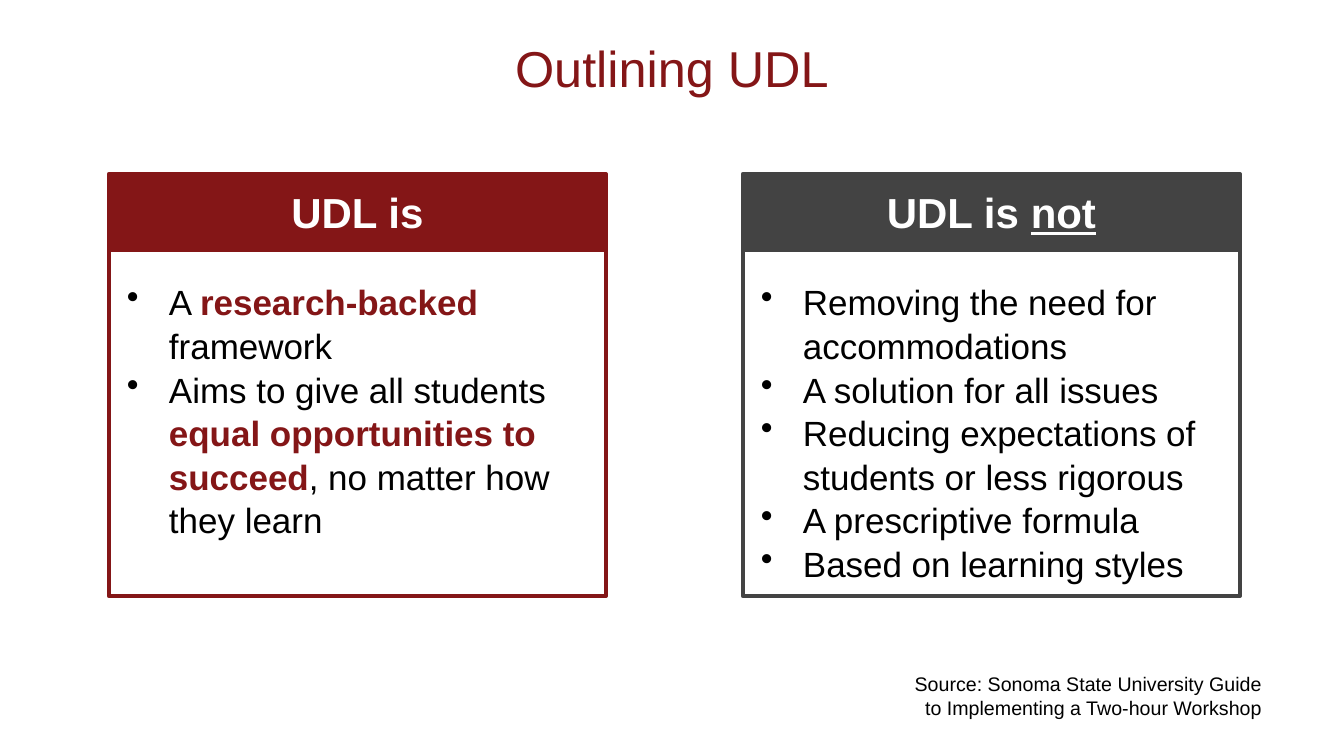
import pptx
import pptx.util
import pptx.dml.color
import pptx.enum.shapes
import pptx.enum.text
import pptx.oxml.ns
from lxml import etree

# Content: each paragraph is a list of (text, style) runs
TITLE = [[("Outlining UDL", "title")]]
PANELS = [
    {"color": "crimson",
     "head": [[("UDL is", "head")]],
     "points": [
         [("A ", "body"), ("research-backed", "strong"), (" framework", "body")],
         [("Aims to give all students ", "body"),
          ("equal opportunities to succeed", "strong"),
          (", no matter how they learn", "body")]]},
    {"color": "gray",
     "head": [[("UDL is ", "head"), ("not", "head_underlined")]],
     "points": [
         [("Removing the need for accommodations", "body")],
         [("A solution for all issues", "body")],
         [("Reducing expectations of students or less rigorous", "body")],
         [("A prescriptive formula", "body")],
         [("Based on learning styles", "body")]]},
]
SOURCE = [[("Source: Sonoma State University Guide to Implementing a Two-hour Workshop", "source")]]

THEME = {
    "colors": {"crimson": "841617", "gray": "434343", "white": "FFFFFF", "black": "000000"},
    "styles": {
        "title": {"size": 36, "color": "crimson"},
        "head": {"size": 30, "color": "white", "bold": True},
        "head_underlined": {"size": 30, "color": "white", "bold": True, "underline": True},
        "body": {"size": 25, "color": "black"},
        "strong": {"size": 25, "color": "crimson", "bold": True},
        "source": {"size": 14, "color": "black"},
    },
    "font": "Arial",
    "border": 3,
}

# Layout in px
SLIDE_W, SLIDE_H = 1344, 756
PANEL_X, PANEL_STEP, PANEL_W = 109, 634, 497
HEAD_Y, HEAD_H, BODY_H = 174, 76, 346
BULLET_INDENT, BULLET_HANG = 50, 42
ALIGN = pptx.enum.text.PP_ALIGN
ANCHOR = pptx.enum.text.MSO_ANCHOR


def px(n):
    return pptx.util.Emu(round(n * 914400 / 100.8))


def rgb(name):
    return pptx.dml.color.RGBColor.from_string(THEME["colors"][name])


def add_bullet(p):
    pPr = p._p.get_or_add_pPr()
    pPr.set("marL", str(px(BULLET_INDENT)))
    pPr.set("indent", str(-px(BULLET_HANG)))
    etree.SubElement(pPr, pptx.oxml.ns.qn("a:buChar")).set("char", "•")


def write(sp, paragraphs, align, anchor, top=10, bottom=10, bullets=False):
    tf = sp.text_frame
    frame = {"word_wrap": True, "vertical_anchor": anchor, "margin_left": px(10),
             "margin_right": px(10), "margin_top": px(top), "margin_bottom": px(bottom)}
    for name, value in frame.items():
        setattr(tf, name, value)
    for i, runs in enumerate(paragraphs):
        p = tf.add_paragraph() if i else tf.paragraphs[0]
        p.alignment = align
        if bullets:
            add_bullet(p)
            p.line_spacing = 1.04
        for text, style in runs:
            r = p.add_run()
            r.text = text
            look = THEME["styles"][style]
            fmt = {"name": THEME["font"], "size": pptx.util.Pt(look["size"]),
                   "bold": look.get("bold", False), "underline": look.get("underline", False)}
            for name, value in fmt.items():
                setattr(r.font, name, value)
            r.font.color.rgb = rgb(look["color"])


def add_box(s, x, y, w, h, fill, line):
    sp = s.shapes.add_shape(pptx.enum.shapes.MSO_SHAPE.RECTANGLE, px(x), px(y), px(w), px(h))
    sp.shadow.inherit = False
    sp.fill.solid()
    sp.fill.fore_color.rgb = rgb(fill)
    sp.line.color.rgb = rgb(line)
    sp.line.width = pptx.util.Pt(THEME["border"])
    return sp


def main():
    prs = pptx.Presentation()
    prs.slide_width, prs.slide_height = px(SLIDE_W), px(SLIDE_H)
    s = prs.slides.add_slide(prs.slide_layouts[6])

    # Title
    sp = s.shapes.add_textbox(px(67), px(30), px(1210), px(75))
    write(sp, TITLE, ALIGN.CENTER, ANCHOR.MIDDLE, top=5, bottom=5)

    # Panels: bulleted body, then header on top
    for i, panel in enumerate(PANELS):
        x, color = PANEL_X + i * PANEL_STEP, panel["color"]
        sp = add_box(s, x, HEAD_Y + HEAD_H, PANEL_W, BODY_H, "white", color)
        write(sp, panel["points"], ALIGN.LEFT, ANCHOR.TOP, top=29, bottom=5, bullets=True)
        sp = add_box(s, x, HEAD_Y, PANEL_W, HEAD_H, color, color)
        write(sp, panel["head"], ALIGN.CENTER, ANCHOR.MIDDLE)

    # Source line
    sp = s.shapes.add_textbox(px(890), px(662), px(382), px(68))
    write(sp, SOURCE, ALIGN.RIGHT, ANCHOR.TOP)

    prs.save("out.pptx")


if __name__ == "__main__":
    main()
